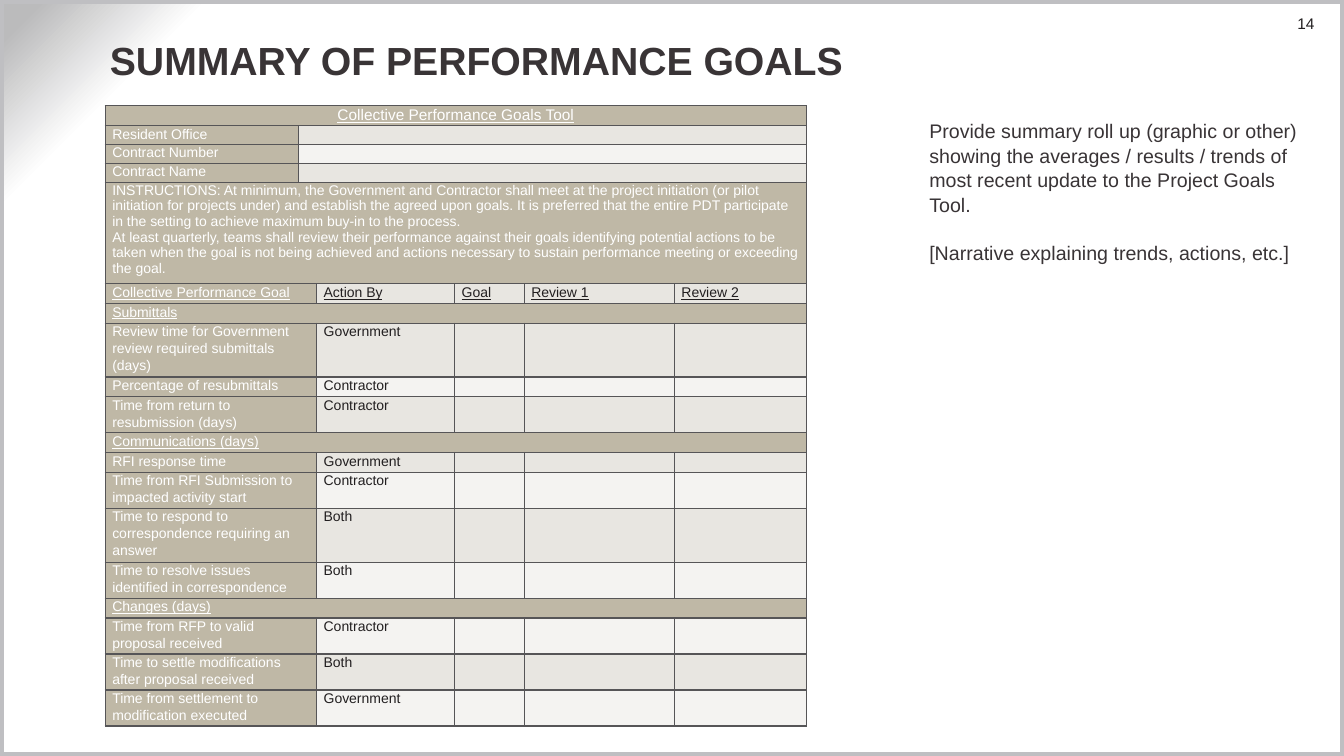
from dataclasses import dataclass

from lxml import etree
from pptx import Presentation
from pptx.dml.color import RGBColor
from pptx.enum.shapes import MSO_SHAPE
from pptx.enum.text import MSO_ANCHOR, MSO_AUTO_SIZE, PP_ALIGN
from pptx.oxml import parse_xml
from pptx.oxml.ns import qn
from pptx.util import Pt

RECTANGLE = MSO_SHAPE.RECTANGLE
MIDDLE, TOP = MSO_ANCHOR.MIDDLE, MSO_ANCHOR.TOP
LEFT, CENTER, RIGHT = PP_ALIGN.LEFT, PP_ALIGN.CENTER, PP_ALIGN.RIGHT
NO_AUTOFIT = MSO_AUTO_SIZE.NONE


@dataclass(frozen=True)
class Theme:
    font: str = "Arial"
    heading: str = "393436"
    ink: str = "221F20"
    white: str = "FFFFFF"
    tan: str = "BFB8A6"
    odd_row: str = "E8E6E1"
    even_row: str = "F4F3F1"
    grid: str = "565557"
    frame: str = "BFBFC2"
    corner: str = "BBBBBC"
    title_size: int = 28
    body_size: int = 14
    small_size: int = 11
    cell_size: int = 10


THEME = Theme()

# Table content: each goal has its wording, who acts, and its line count
OFFICE_FIELDS = [("Resident Office", 13.2), ("Contract Number", 13.6), ("Contract Name", 14)]
INSTRUCTIONS = [
    "INSTRUCTIONS: At minimum, the Government and Contractor shall meet at the project "
    "initiation (or pilot initiation for projects under) and establish the agreed upon goals. "
    "It is preferred that the entire PDT participate in the setting to achieve maximum buy-in "
    "to the process.",
    "At least quarterly, teams shall review their performance against their goals identifying "
    "potential actions to be taken when the goal is not being achieved and actions necessary "
    "to sustain performance meeting or exceeding the goal.",
]
GOAL_HEADINGS = ["Action By", "Goal", "Review 1", "Review 2"]
GOAL_GROUPS = [
    ("Submittals", [
        ("Review time for Government review required submittals (days)", "Government", 3),
        ("Percentage of resubmittals", "Contractor", 1),
        ("Time from return to resubmission (days)", "Contractor", 2),
    ]),
    ("Communications (days)", [
        ("RFI response time", "Government", 1),
        ("Time from RFI Submission to impacted activity start", "Contractor", 2),
        ("Time to respond to correspondence requiring an answer", "Both", 3),
        ("Time to resolve issues identified in correspondence", "Both", 2),
    ]),
    ("Changes (days)", [
        ("Time from RFP to valid proposal received", "Contractor", 2),
        ("Time to settle modifications after proposal received", "Both", 2),
        ("Time from settlement to modification executed", "Government", 2),
    ]),
]
COLUMN_WIDTHS = [138.2, 10.1, 98.6, 49.7, 107.3, 94.3]
HEIGHT_BY_LINES = {1: 14.1, 2: 25.5, 3: 38.4}
NOTES = [
    "Provide summary roll up (graphic or other) showing the averages / results / trends of "
    "most recent update to the Project Goals Tool.",
    "[Narrative explaining trends, actions, etc.]",
]


def add_run(paragraph, text, size, color, bold=False, underline=False):
    run = paragraph.add_run()
    run.text = text
    run.font.name = THEME.font
    run.font.size = Pt(size)
    run.font.color.rgb = RGBColor.from_string(color)
    run.font.bold = bold
    run.font.underline = underline


def place(shape, left, top, width, height):
    shape.left, shape.top = Pt(left), Pt(top)
    shape.width, shape.height = Pt(width), Pt(height)


def set_insets(target, left, right):
    target.margin_left, target.margin_right = Pt(left), Pt(right)
    target.margin_top = target.margin_bottom = 0


def paint_background(slide):
    stops = "".join(
        f'<a:gs pos="{percent * 1000}"><a:srgbClr val="{color}"/></a:gs>'
        for percent, color in [(87, THEME.white), (90, THEME.white), (98, THEME.corner)])
    background = parse_xml(
        '<p:bg xmlns:p="http://schemas.openxmlformats.org/presentationml/2006/main" '
        'xmlns:a="http://schemas.openxmlformats.org/drawingml/2006/main">'
        f'<p:bgPr><a:gradFill rotWithShape="1"><a:gsLst>{stops}</a:gsLst>'
        '<a:path path="circle"><a:fillToRect l="100000" t="100000"/></a:path>'
        '</a:gradFill><a:effectLst/></p:bgPr></p:bg>')
    slide.element.cSld.insert(0, background)


def add_frame(slide):
    frame = slide.shapes.add_shape(RECTANGLE, 0, 0, Pt(960), Pt(540))
    frame.shadow.inherit = False
    frame.fill.background()
    frame.line.color.rgb = RGBColor.from_string(THEME.frame)
    frame.line.width = Pt(6)


def add_page_number(slide, number):
    page_number = slide.shapes.add_textbox(Pt(895.7), Pt(10), Pt(43.2), Pt(13.7))
    frame = page_number.text_frame
    frame.word_wrap = True
    set_insets(frame, 7.2, 0)
    frame.paragraphs[0].alignment = RIGHT
    add_run(frame.paragraphs[0], number, THEME.small_size, THEME.ink)


def fill_title(title, text):
    place(title, 74.9, 10, 818, 65.5)
    frame = title.text_frame
    frame.auto_size = NO_AUTOFIT
    frame.vertical_anchor = MIDDLE
    set_insets(frame, 3.6, 3.6)
    frame.paragraphs[0].alignment = LEFT
    add_run(frame.paragraphs[0], text, THEME.title_size, THEME.heading, bold=True)


def fill_notes(body, notes):
    place(body, 656.6, 80.6, 283, 440.6)
    frame = body.text_frame
    frame.auto_size = NO_AUTOFIT
    frame.vertical_anchor = TOP
    for index, note in enumerate(notes):
        paragraph = frame.add_paragraph() if index else frame.paragraphs[0]
        properties = paragraph._p.get_or_add_pPr()
        properties.set("marL", "0")
        properties.set("indent", "0")
        etree.SubElement(properties, qn("a:buNone"))
        paragraph.line_spacing = 1.05
        paragraph.space_before = Pt(16.8 if index else 0)
        add_run(paragraph, note, THEME.body_size, THEME.heading)


def style_cell(cell, fill):
    set_insets(cell, 5, 5)
    properties = cell._tc.get_or_add_tcPr()
    for side in ("lnL", "lnR", "lnT", "lnB"):
        border = etree.SubElement(properties, qn(f"a:{side}"), w=str(Pt(1)))
        solid = etree.SubElement(border, qn("a:solidFill"))
        etree.SubElement(solid, qn("a:srgbClr"), val=THEME.grid)
    cell.fill.solid()
    cell.fill.fore_color.rgb = RGBColor.from_string(fill)


def write_cell(cell, lines, color, size=THEME.cell_size, underline=False, spacing=1.07):
    paragraph = cell.text_frame.paragraphs[0]
    paragraph.line_spacing = spacing
    for index, line in enumerate(lines):
        if index:
            paragraph.add_line_break()
        add_run(paragraph, line, size, color, underline=underline)
    if not lines:
        etree.SubElement(paragraph._p, qn("a:endParaRPr"), sz=str(size * 100))


def goal_rows():
    """Each row: height, label lines, label column span, other cells, underlined."""
    rows = [(14, ["Collective Performance Goals Tool"], 6, [], True)]
    rows += [(height, [label], 1, [""], False) for label, height in OFFICE_FIELDS]
    rows.append((71.6, INSTRUCTIONS, 6, [], False))
    rows.append((HEIGHT_BY_LINES[1], ["Collective Performance Goal"], 2, GOAL_HEADINGS, True))
    for group, goals in GOAL_GROUPS:
        rows.append((HEIGHT_BY_LINES[1], [group], 6, [], True))
        rows += [(HEIGHT_BY_LINES[lines], [goal], 2, [actor, "", "", ""], False)
                 for goal, actor, lines in goals]
    return rows


def add_goals_table(slide):
    rows = goal_rows()
    table = slide.shapes.add_table(
        len(rows), len(COLUMN_WIDTHS), Pt(75.2), Pt(75.6),
        Pt(sum(COLUMN_WIDTHS)), Pt(sum(row[0] for row in rows))).table
    table.first_row = table.horz_banding = False
    for column, width in zip(table.columns, COLUMN_WIDTHS):
        column.width = Pt(width)
    for index, (height, label, span, others, underline) in enumerate(rows):
        table.rows[index].height = Pt(height)
        row_fill = THEME.odd_row if index % 2 else THEME.even_row
        cells = [table.cell(index, column) for column in range(len(COLUMN_WIDTHS))]
        for column, cell in enumerate(cells):
            style_cell(cell, THEME.tan if column < span else row_fill)
        if span > 1:
            cells[0].merge(cells[span - 1])
        else:
            cells[1].merge(cells[-1])
        write_cell(cells[0], label, THEME.white,
                   size=THEME.cell_size if index else THEME.small_size,
                   underline=underline, spacing=1.07 if len(label) == 1 else 1.0)
        for cell, text in zip(cells[span:], others):
            write_cell(cell, [text] if text else [], THEME.ink, underline=underline)
    table.cell(0, 0).text_frame.paragraphs[0].alignment = CENTER


def main():
    deck = Presentation()
    deck.slide_width, deck.slide_height = Pt(960), Pt(540)
    slide = deck.slides.add_slide(deck.slide_layouts[1])
    paint_background(slide)
    add_frame(slide)
    add_page_number(slide, "14")
    fill_title(slide.shapes.title, "SUMMARY OF PERFORMANCE GOALS")
    fill_notes(slide.placeholders[1], NOTES)
    add_goals_table(slide)
    deck.save("out.pptx")


if __name__ == "__main__":
    main()
